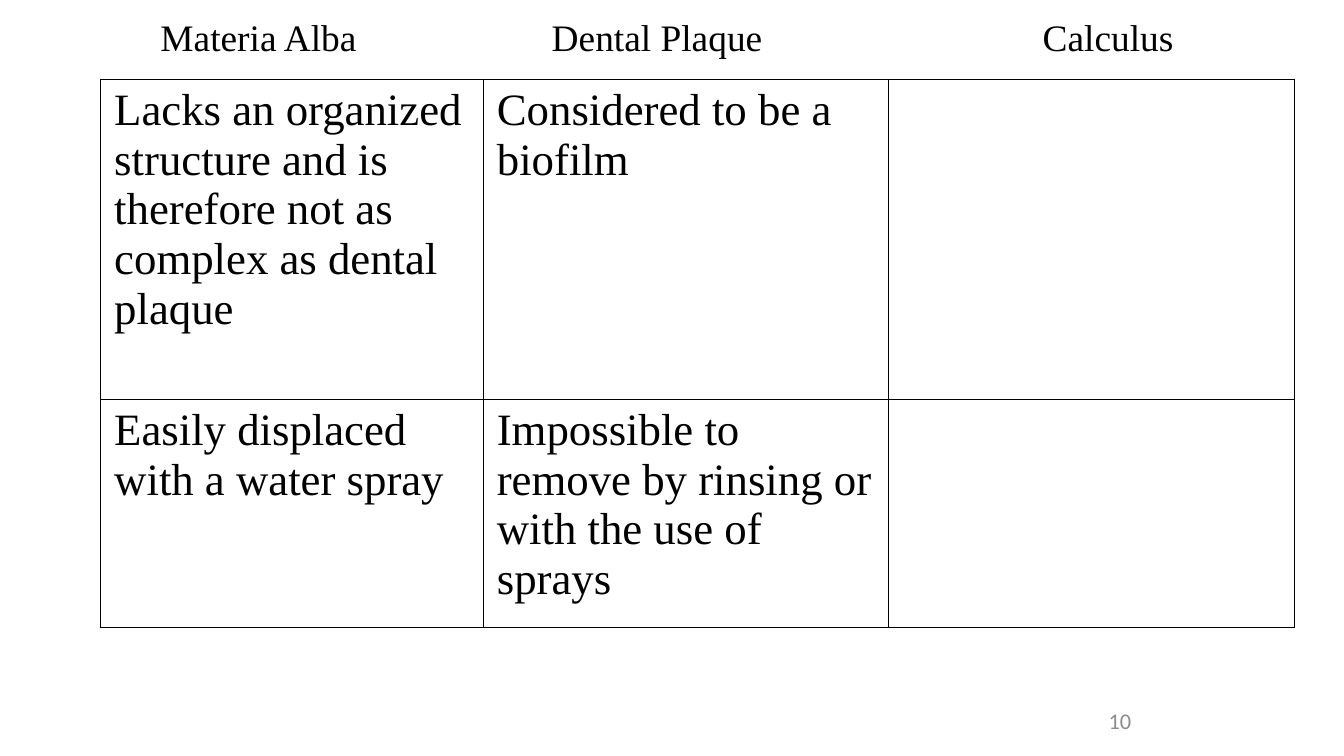
from dataclasses import dataclass

from lxml.etree import SubElement
from pptx import Presentation
from pptx.dml.color import RGBColor as RGB
from pptx.enum.text import MSO_ANCHOR as Anchor, PP_ALIGN as Align
from pptx.oxml.ns import qn
from pptx.util import Pt

COLORS = {"ink": "000000", "paper": "FFFFFF", "number": "8C8C8C"}
SERIF = "Times New Roman"
COLUMN_WIDTHS = (205, 217.2, 217.2)
ROW_HEIGHTS = (171.4, 122.4)
HEADING_STOPS = (40, 249.6, 512.6)


@dataclass
class Style:
    font: str
    size: float
    color: str


@dataclass
class Box:
    left: float
    top: float
    width: float
    height: float

    def lengths(self) -> tuple:
        return Pt(self.left), Pt(self.top), Pt(self.width), Pt(self.height)


HEADING = Style(SERIF, 20, "ink")
BODY = Style(SERIF, 24, "ink")
NUMBER = Style("Calibri", 12, "number")

COMPARISON = (
    ("Lacks an organized structure and is therefore not as complex as dental plaque",
     "Considered to be a biofilm", ""),
    ("Easily displaced with a water spray",
     "Impossible to remove by rinsing or\nwith the use of sprays", ""),
)


def style_font(font, style: Style) -> None:
    font.name = style.font
    font.size = Pt(style.size)
    font.color.rgb = RGB.from_string(COLORS[style.color])


def write(frame, text: str, style: Style) -> None:
    frame.text = text
    for paragraph in frame.paragraphs:
        if not paragraph.runs:
            style_font(paragraph.font, style)
        for run in paragraph.runs:
            style_font(run.font, style)


def add_text(slide, box: Box, text: str, style: Style):
    frame = slide.shapes.add_textbox(*box.lengths()).text_frame
    frame.word_wrap = True
    write(frame, text, style)
    return frame


def set_tabs(paragraph, stops: tuple) -> None:
    tabs = SubElement(paragraph._p.get_or_add_pPr(), qn("a:tabLst"))
    for stop in stops:
        SubElement(tabs, qn("a:tab"), pos=str(Pt(stop)), algn="l")


def set_borders(cell, color: str, width: float) -> None:
    properties = cell._tc.get_or_add_tcPr()
    for index, side in enumerate(("lnL", "lnR", "lnT", "lnB")):
        line = SubElement(properties, qn(f"a:{side}"), w=str(Pt(width)))
        fill = SubElement(line, qn("a:solidFill"))
        SubElement(fill, qn("a:srgbClr"), val=COLORS[color])
        properties.insert(index, line)  # borders precede the cell fill


def add_comparison(slide, left: float, top: float) -> None:
    box = Box(left, top, sum(COLUMN_WIDTHS), sum(ROW_HEIGHTS))
    table = slide.shapes.add_table(
        len(ROW_HEIGHTS), len(COLUMN_WIDTHS), *box.lengths()).table
    table.first_row = table.horz_banding = False
    for column, width in zip(table.columns, COLUMN_WIDTHS):
        column.width = Pt(width)
    for row, height, texts in zip(table.rows, ROW_HEIGHTS, COMPARISON):
        row.height = Pt(height)
        for cell, text in zip(row.cells, texts):
            write(cell.text_frame, text, BODY)
            cell.fill.solid()
            cell.fill.fore_color.rgb = RGB.from_string(COLORS["paper"])
            set_borders(cell, "ink", 0.75)


def main() -> None:
    deck = Presentation()
    deck.slide_width, deck.slide_height = Pt(720), Pt(405)
    slide = deck.slides.add_slide(deck.slide_layouts[6])

    # Page number
    number = add_text(slide, Box(516, 375, 168, 21.6), "10", NUMBER)
    number.vertical_anchor = Anchor.MIDDLE
    number.paragraphs[0].alignment = Align.CENTER

    # Comparison table
    add_comparison(slide, 54, 42.5)

    # Column headings, placed by tab stops
    headings = add_text(slide, Box(38.9, 4.3, 658.8, 31.7),
                        "\tMateria Alba\tDental Plaque\tCalculus", HEADING)
    set_tabs(headings.paragraphs[0], HEADING_STOPS)

    deck.save("out.pptx")


if __name__ == "__main__":
    main()
